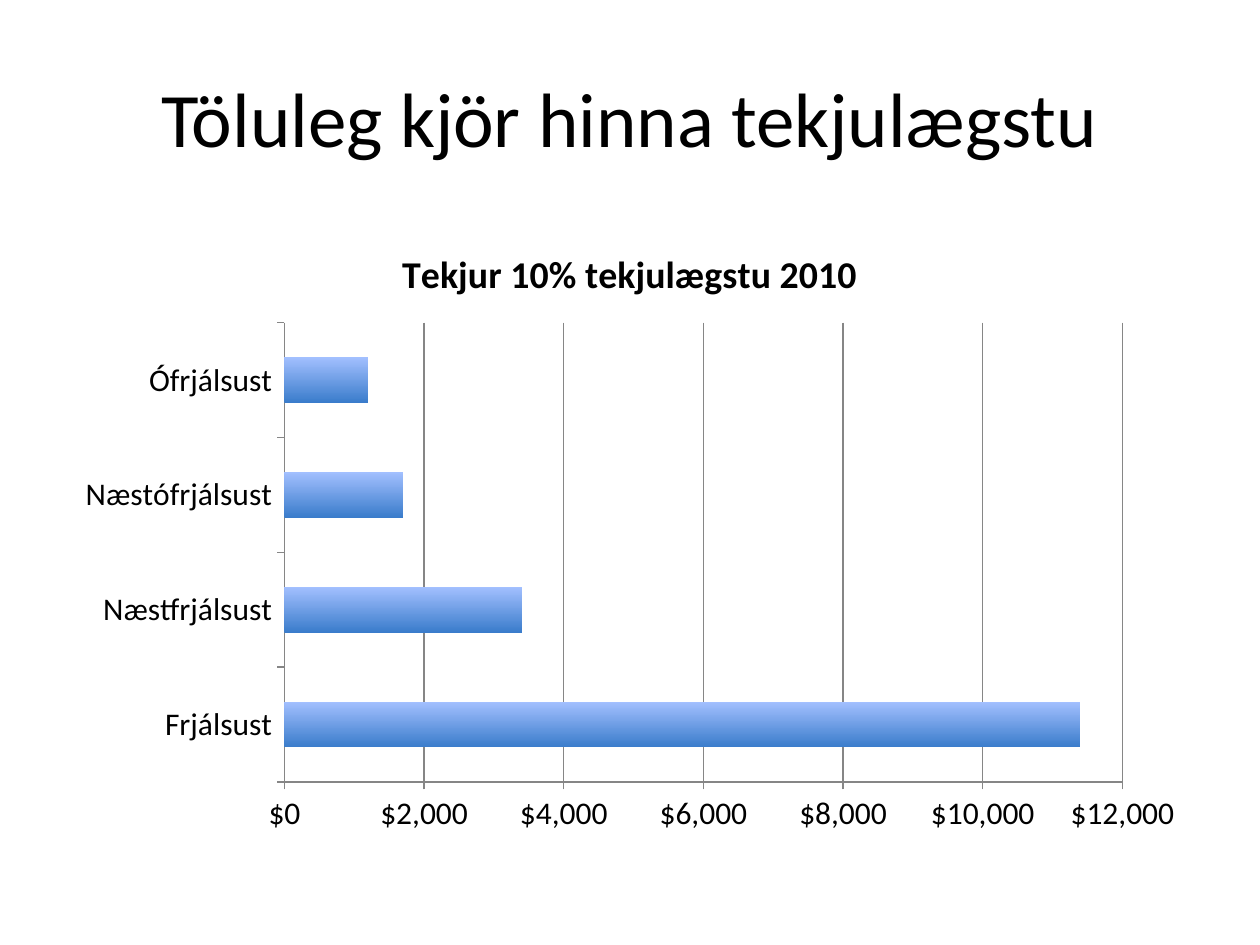
from pptx import Presentation
from pptx.chart.data import CategoryChartData
from pptx.dml.color import RGBColor
from pptx.enum.chart import XL_CHART_TYPE, XL_TICK_MARK
from pptx.enum.text import MSO_ANCHOR, PP_ALIGN
from pptx.util import Emu, Pt

BLACK = RGBColor(0x00, 0x00, 0x00)
GRAY = RGBColor(0x86, 0x86, 0x86)
BAR_DARK = RGBColor(0x3A, 0x7C, 0xCB)
BAR_LIGHT = RGBColor(0xA3, 0xC0, 0xFF)
FONT = "Calibri"
CHART_TITLE = "Tekjur 10% tekjulægstu 2010"
INCOMES = {
    "Frjálsust": 11400,
    "Næstfrjálsust": 3400,
    "Næstófrjálsust": 1700,
    "Ófrjálsust": 1200,
}


def px(length):
    """Turn whole pixels into EMU at 126 pixels to the inch."""
    return Emu(round(length * 914400 / 126))


def set_font(font, size, bold=False):
    """Give a font the slide's typeface and colour."""
    font.name = FONT
    font.size = Pt(size)
    font.bold = bold
    font.color.rgb = BLACK


def place_title(page, left, top, width, height):
    """Place the slide title in its box."""
    title = page.shapes.title
    title.left, title.top = px(left), px(top)
    title.width, title.height = px(width), px(height)
    frame = title.text_frame
    frame.text = "Töluleg kjör hinna tekjulægstu"
    frame.vertical_anchor = MSO_ANCHOR.MIDDLE
    para = frame.paragraphs[0]
    para.alignment = PP_ALIGN.CENTER
    set_font(para.runs[0].font, 44)


def style_axis(axis):
    """Give an axis outward ticks and a thin gray line."""
    axis.major_tick_mark = XL_TICK_MARK.OUTSIDE
    axis.minor_tick_mark = XL_TICK_MARK.NONE
    axis.format.line.color.rgb = GRAY
    axis.format.line.width = Pt(0.75)


def place_income_chart(page, left, top, width, height):
    """Place the bar chart of incomes in its box."""
    data = CategoryChartData(number_format='"$"#,##0')
    data.categories = list(INCOMES)
    data.add_series(CHART_TITLE, list(INCOMES.values()))
    chart = page.shapes.add_chart(
        XL_CHART_TYPE.BAR_CLUSTERED, px(left), px(top), px(width), px(height), data
    ).chart
    set_font(chart.font, 18)
    chart.has_legend = False
    chart.has_title = True
    title_frame = chart.chart_title.text_frame
    title_frame.text = CHART_TITLE
    set_font(title_frame.paragraphs[0].runs[0].font, 21.6, bold=True)
    chart.chart_title.include_in_layout = False

    style_axis(chart.category_axis)
    value_axis = chart.value_axis
    style_axis(value_axis)
    value_axis.minimum_scale, value_axis.maximum_scale = 0, 12000
    value_axis.major_unit = 2000
    value_axis.tick_labels.number_format = '"$"#,##0'
    value_axis.tick_labels.number_format_is_linked = False
    value_axis.has_major_gridlines = True
    value_axis.major_gridlines.format.line.color.rgb = GRAY
    value_axis.major_gridlines.format.line.width = Pt(0.75)

    plot = chart.plots[0]
    plot.gap_width = 150
    plot.vary_by_categories = False
    series = plot.series[0]
    series.invert_if_negative = False
    fill = series.format.fill
    fill.gradient()
    fill.gradient_angle = 90
    for stop, color, position in zip(fill.gradient_stops, (BAR_DARK, BAR_LIGHT), (0, 1)):
        stop.color.rgb = color
        stop.position = position


def main():
    """Build the slide and save it."""
    deck = Presentation()
    deck.slide_width, deck.slide_height = px(1260), px(945)
    page = deck.slides.add_slide(deck.slide_layouts[5])
    place_title(page, 63, 38, 1134, 158)
    place_income_chart(page, 63, 221, 1134, 624)
    deck.save("out.pptx")


if __name__ == "__main__":
    main()
